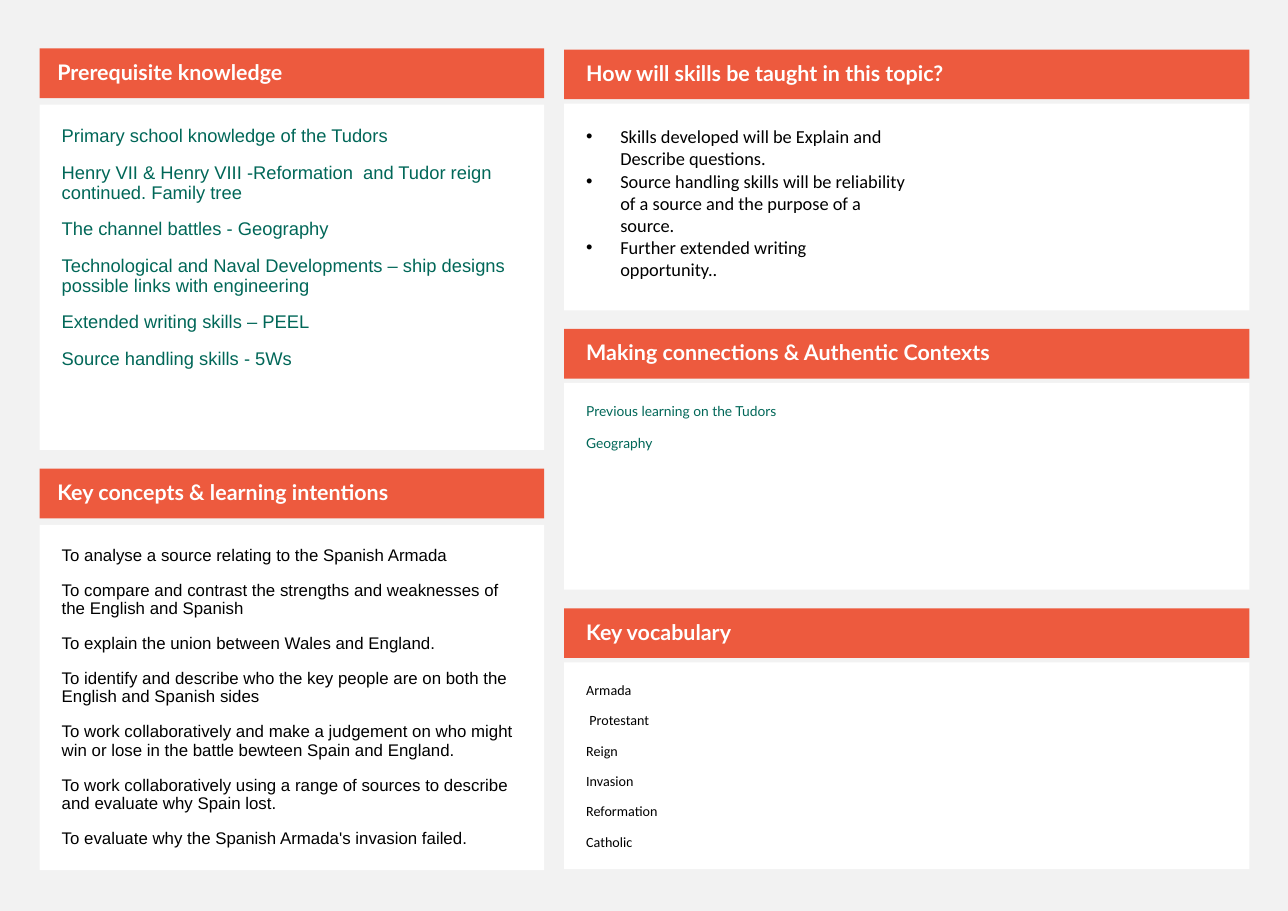
from lxml import etree
from pptx import Presentation, util as u
from pptx.dml.color import RGBColor
from pptx.enum import shapes, text
from pptx.oxml import ns

GREY = RGBColor(0xF2, 0xF2, 0xF2)
WHITE = RGBColor(0xFF, 0xFF, 0xFF)
CORAL = RGBColor(0xED, 0x5A, 0x3E)
GREEN = RGBColor(0x00, 0x67, 0x58)
BLACK = RGBColor(0, 0, 0)

BAR = 0.45

LEFT = [
    ("Prerequisite knowledge", [
        "Primary school knowledge of the Tudors",
        "Henry VII & Henry VIII -Reformation  and Tudor reign continued. Family tree",
        "The channel battles - Geography",
        "Technological and Naval Developments – ship designs possible links with engineering",
        "Extended writing skills – PEEL",
        "Source handling skills - 5Ws",
    ], dict(size=12, font="Arial", color=GREEN)),
    ("Key concepts & learning intentions", [
        "To analyse a source relating to the Spanish Armada",
        "To compare and contrast the strengths and weaknesses of the English and Spanish",
        "To explain the union between Wales and England.",
        "To identify and describe who the key people are on both the English and Spanish sides",
        "To work collaboratively and make a judgement on who might win or lose in the battle bewteen Spain and England.",
        "To work collaboratively using a range of sources to describe and evaluate why Spain lost.",
        "To evaluate why the Spanish Armada's invasion failed.",
    ], dict(size=11, font="Arial", color=BLACK)),
]

RIGHT = [
    ("How will skills be taught in this topic?", [
        "Skills developed will be Explain and Describe questions.",
        "Source handling skills will be reliability of a source and the purpose of a source.",
        "Further extended writing opportunity..",
    ], dict(size=12, font="Calibri", color=BLACK, line=1, gap=0, bullet="•", cols=2)),
    ("Making connections & Authentic Contexts", [
        "Previous learning on the Tudors",
        "Geography",
    ], dict(size=9, font="Lato", color=GREEN)),
    ("Key vocabulary", [
        "Armada",
        " Protestant",
        "Reign",
        "Invasion",
        "Reformation",
        "Catholic",
    ], dict(size=9.2, font="Calibri", color=BLACK, line=0.8)),
]


def write(frame, lines, size, font, color, bold=False, line=0.9, gap=11,
          bullet=None, cols=1):
    if cols > 1:
        frame._txBody.bodyPr.set("numCol", str(cols))
    for i, words in enumerate(lines):
        para = frame.add_paragraph() if i else frame.paragraphs[0]
        para.alignment = text.PP_ALIGN.LEFT
        para.line_spacing = line
        para.space_before = u.Pt(gap)
        if bullet:
            props = para._p.get_or_add_pPr()
            props.set("marL", str(u.Inches(0.31)))
            props.set("indent", str(u.Inches(-0.31)))
            etree.SubElement(props, ns.qn("a:buFont")).set("typeface", "Arial")
            etree.SubElement(props, ns.qn("a:buChar")).set("char", bullet)
        run = para.add_run()
        run.text = words
        run.font.size = u.Pt(size)
        run.font.name = font
        run.font.bold = bold
        run.font.color.rgb = color


def block(slide, box, fill, lines, pads, anchor, **style):
    rect = slide.shapes.add_shape(
        shapes.MSO_SHAPE.RECTANGLE, *[u.Inches(n) for n in box])
    rect.shadow.inherit = False
    rect.fill.solid()
    rect.fill.fore_color.rgb = fill
    rect.line.fill.background()
    frame = rect.text_frame
    frame.word_wrap = True
    frame.vertical_anchor = anchor
    (frame.margin_left, frame.margin_top,
     frame.margin_right, frame.margin_bottom) = [u.Inches(n) for n in pads]
    write(frame, lines, **style)


def panel(slide, box, head, lines, style, drop, inset):
    x, y, w, h = box
    block(slide, (x, y, w, BAR), CORAL, [head], (inset, 0.05, 0.1, 0.05),
          text.MSO_ANCHOR.MIDDLE, size=14, font="Lato", color=WHITE, bold=True)
    block(slide, (x, y + drop, w, h - drop), WHITE, lines, (0.2,) * 4,
          text.MSO_ANCHOR.TOP, **style)


def column(slide, box, panels, gap, drop, inset):
    x, y, w, h = box
    tall = (h - gap * (len(panels) - 1)) / len(panels)
    for i, (head, lines, style) in enumerate(panels):
        spot = (x, y + i * (tall + gap), w, tall)
        panel(slide, spot, head, lines, style, drop, inset)


def main():
    deck = Presentation()
    deck.slide_width = u.Inches(11.69)
    deck.slide_height = u.Inches(8.27)
    slide = deck.slides.add_slide(deck.slide_layouts[6])
    slide.background.fill.solid()
    slide.background.fill.fore_color.rgb = GREY
    column(slide, (0.36, 0.44, 4.58, 7.46), LEFT, gap=0.17, drop=0.51, inset=0.16)
    column(slide, (5.12, 0.45, 6.22, 7.44), RIGHT, gap=0.17, drop=0.49, inset=0.2)
    deck.save("out.pptx")


if __name__ == "__main__":
    main()
